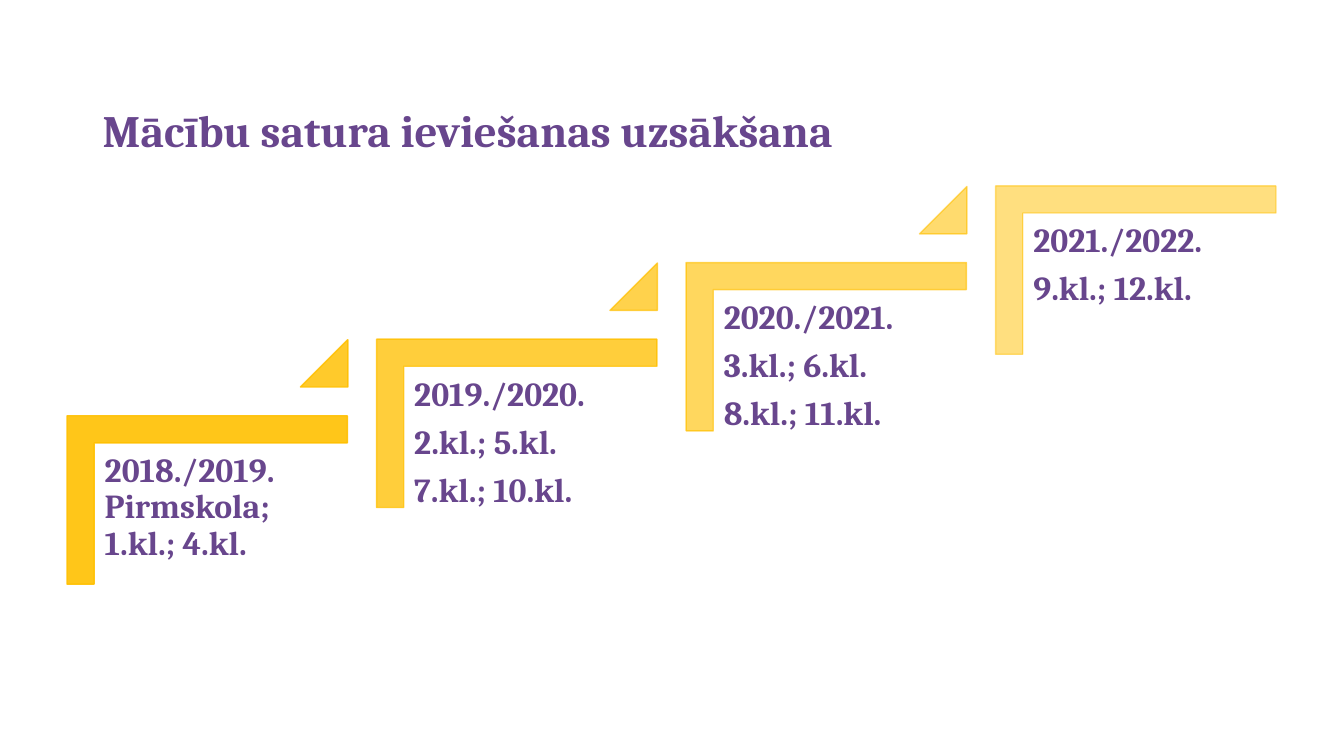
from pptx import Presentation
from pptx.dml.color import RGBColor
from pptx.enum.shapes import MSO_SHAPE as Preset
from pptx.enum.text import MSO_ANCHOR as Anchor
from pptx.oxml.ns import qn
from pptx.oxml.xmlchemy import OxmlElement
from pptx.util import Emu, Pt

GOLD = RGBColor(0xFF, 0xC0, 0x00)
PURPLE = RGBColor(0x68, 0x46, 0x8D)
FONT = "Cambria"

# Each stair is this far right of, and above, the one before
STEP_RIGHT, STEP_UP = 307, 76

STAIRS = [
    ["2018./2019. Pirmskola; 1.kl.; 4.kl."],
    ["2019./2020.", "2.kl.; 5.kl.", "7.kl.; 10.kl."],
    ["2020./2021.", "3.kl.; 6.kl.", "8.kl.; 11.kl."],
    ["2021./2022.", "9.kl.; 12.kl."],
]


def px(length):
    """100 px to the inch."""
    return Emu(length * 9144)


def add_text(slide, left, top, width, height, lines, size, anchor=Anchor.TOP, space_after=0):
    frame = slide.shapes.add_textbox(px(left), px(top), px(width), px(height)).text_frame
    frame.word_wrap = True
    frame.vertical_anchor = anchor
    frame.text = "\n".join(lines)
    for paragraph in frame.paragraphs:
        paragraph.line_spacing = 0.9
        paragraph.space_after = Pt(space_after)
        paragraph.font.name = FONT
        paragraph.font.size = Pt(size)
        paragraph.font.bold = True
        paragraph.font.color.rgb = PURPLE
    return frame


def add_gold_shape(slide, preset, left, top, width, height, adjustments, opacity):
    shape = slide.shapes.add_shape(preset, px(left), px(top), px(width), px(height))
    shape.shadow.inherit = False
    for index, value in enumerate(adjustments):
        shape.adjustments[index] = value
    shape.fill.solid()
    shape.fill.fore_color.rgb = GOLD
    shape.line.color.rgb = GOLD
    shape.line.width = Pt(1)
    # Same opacity for fill and line
    for color in shape._element.spPr.iter(qn("a:srgbClr")):
        alpha = OxmlElement("a:alpha")
        alpha.set("val", str(round(opacity * 1000)))
        color.append(alpha)
    return shape


def add_corner(slide, left, top, width, height, opacity):
    # python-pptx has no name for the corner preset; the half frame has the same adjustments
    corner = add_gold_shape(slide, Preset.HALF_FRAME, left, top, width, height,
                            [0.161, 0.161], opacity)
    corner._element.spPr.find(qn("a:prstGeom")).set("prst", "corner")
    corner.rotation = 90


def add_stair(slide, index, lines):
    right, up = index * STEP_RIGHT, index * STEP_UP
    # Opacity falls evenly from 90 to 50 over corners and triangles in turn
    opacity = 90 - 40 * index / 3
    add_corner(slide, 122 + right, 357 - up, 167, 278, opacity)
    frame = add_text(slide, 94 + right, 440 - up, 251, 220, lines, 24, space_after=8.4)
    frame.margin_left = frame.margin_right = px(10)
    frame.margin_top = frame.margin_bottom = px(10)
    if index < len(STAIRS) - 1:
        add_gold_shape(slide, Preset.ISOSCELES_TRIANGLE, 298 + right, 337 - up, 47, 47,
                       [1], opacity - 20 / 3)


def main():
    presentation = Presentation()
    presentation.slide_width, presentation.slide_height = px(1333), px(750)
    slide = presentation.slides.add_slide(presentation.slide_layouts[6])

    # Title
    add_text(slide, 92, 62, 1150, 140, ["Mācību satura ieviešanas uzsākšana"], 32, Anchor.MIDDLE)

    # Staircase of school years
    for index, lines in enumerate(STAIRS):
        add_stair(slide, index, lines)

    presentation.save("out.pptx")


if __name__ == "__main__":
    main()
